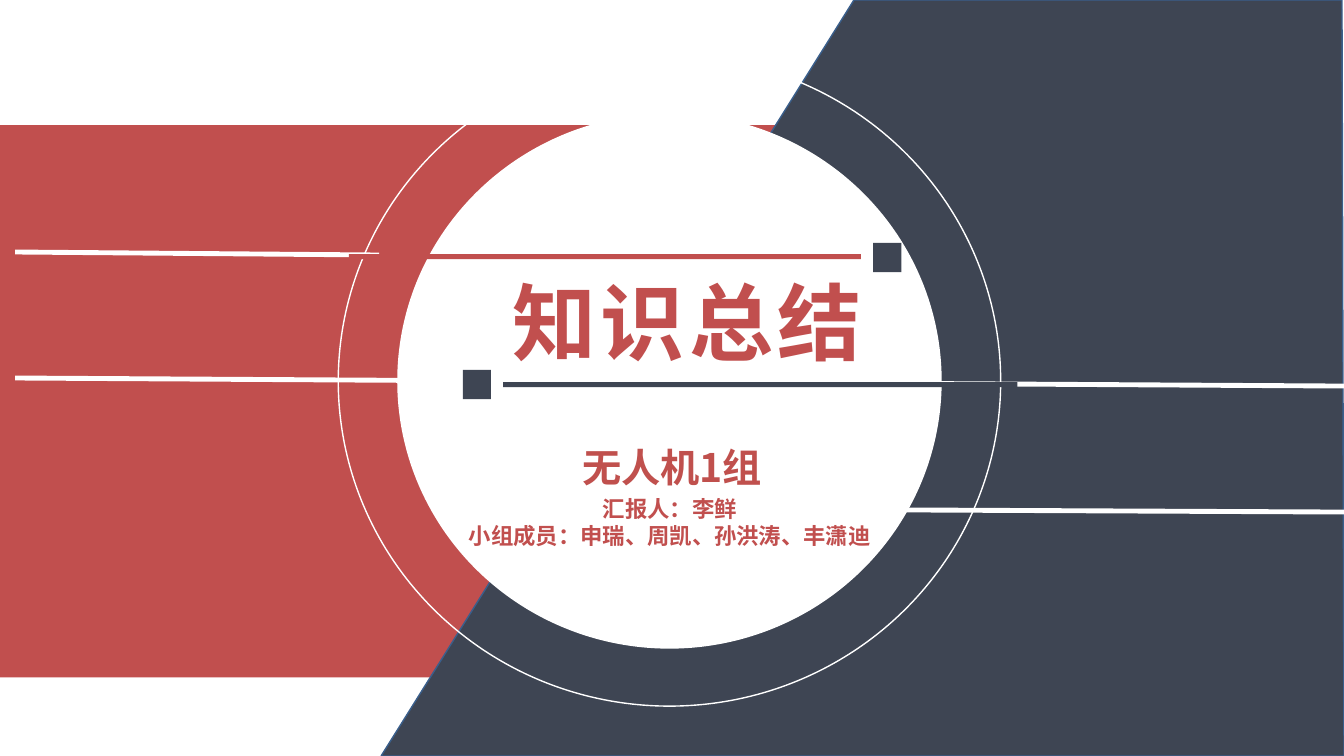
from pptx import Presentation
from pptx.dml.color import RGBColor
from pptx.enum.shapes import MSO_CONNECTOR, MSO_SHAPE
from pptx.enum.text import MSO_ANCHOR, PP_ALIGN
from pptx.oxml.ns import qn
from pptx.util import Inches, Pt
from lxml.etree import SubElement

COLORS = {"red": "C14F4E", "label": "C0504D", "dark": "3E4553",
          "edge": "3A5F8C", "white": "FFFFFF"}
FONT = "Noto Sans CJK SC"
W, H = 13.33, 7.5


def paint(s, fill=None, line=None, width=1):
    """Give a shape a flat fill and outline, without shadow."""
    s.shadow.inherit = False
    if fill:
        s.fill.solid()
        s.fill.fore_color.rgb = RGBColor.from_string(COLORS[fill])
    else:
        s.fill.background()
    if line:
        s.line.color.rgb = RGBColor.from_string(COLORS[line])
        s.line.width = Pt(width)
    else:
        s.line.fill.background()


def write(sp, box, lines, size, color="red", spacing=None, tracking=0):
    """Place a text shape in front and fill it with centred bold lines."""
    sp.left, sp.top, sp.width, sp.height = map(Inches, box)
    sp.element.getparent().append(sp.element)
    tf = sp.text_frame
    tf.word_wrap = True
    tf.vertical_anchor = MSO_ANCHOR.MIDDLE
    for i, text in enumerate(lines):
        p = tf.add_paragraph() if i else tf.paragraphs[0]
        p.alignment = PP_ALIGN.CENTER
        p.space_before = Pt(0)
        p.line_spacing = spacing
        r = p.add_run()
        r.text = text
        r.font.size, r.font.bold, r.font.name = Pt(size), True, FONT
        r.font.color.rgb = RGBColor.from_string(COLORS[color])
        SubElement(r.font._element, qn("a:ea"), typeface=FONT)
        if tracking:
            r.font._element.set("spc", str(tracking * 100))


prs = Presentation()
prs.slide_width, prs.slide_height = Inches(W), Inches(H)
slide = prs.slides.add_slide(prs.slide_layouts[0])
shapes = slide.shapes
title, members = slide.placeholders

# Red band and slanted dark panel
band = shapes.add_shape(MSO_SHAPE.RECTANGLE, 0, Inches(1.24), Inches(12.6), Inches(5.48))
paint(band, "red")
outline = shapes.build_freeform(Inches(8.47), 0, scale=1.0)
outline.add_line_segments([(Inches(x), Inches(y)) for x, y in
                           [(13.31, 0), (W, H), (3.78, H)]])
paint(outline.convert_to_shape(), "dark", "edge")

# Disc and ring share one centre
for width, height, fill, line in [(5.4, 5.31, "white", None), (6.57, 6.45, None, "white")]:
    s = shapes.add_shape(MSO_SHAPE.OVAL, Inches(6.64 - width / 2), Inches(3.78 - height / 2),
                         Inches(width), Inches(height))
    paint(s, fill, line)

# White rules
for x1, y1, x2, y2 in [(0.15, 3.75, W, 3.83), (7.14, 5.05, W, 5.08), (0.15, 2.5, 3.76, 2.53)]:
    rule = shapes.add_connector(MSO_CONNECTOR.STRAIGHT, *map(Inches, (x1, y1, x2, y2)))
    rule.line.color.rgb = RGBColor.from_string(COLORS["white"])
    rule.line.width = Pt(3.5)
    SubElement(rule._element.spPr, qn("a:effectLst"))

# Squares and bars framing the title
for x, y, width, height, fill in [(8.66, 2.41, 0.28, 0.29, "dark"),
                                  (4.59, 3.67, 0.28, 0.29, "dark"),
                                  (3.46, 2.52, 5.08, 0.05, "red"),
                                  (4.99, 3.79, 5.1, 0.05, "dark")]:
    s = shapes.add_shape(MSO_SHAPE.RECTANGLE, *map(Inches, (x, y, width, height)))
    paint(s, fill)

write(title, (4.8, 2.63, 4.03, 1.11), ["知识总结"], 60, tracking=3)
write(shapes.add_textbox(0, 0, 0, 0), (4.5, 4.21, 4.33, 0.71), ["无人机1组"], 28,
      color="label", spacing=1.3)
write(members, (4.46, 4.86, 4.37, 0.64),
      ["汇报人：李鲜", "小组成员：申瑞、周凯、孙洪涛、丰潇迪"], 16, spacing=Pt(19.3))

prs.save("out.pptx")
